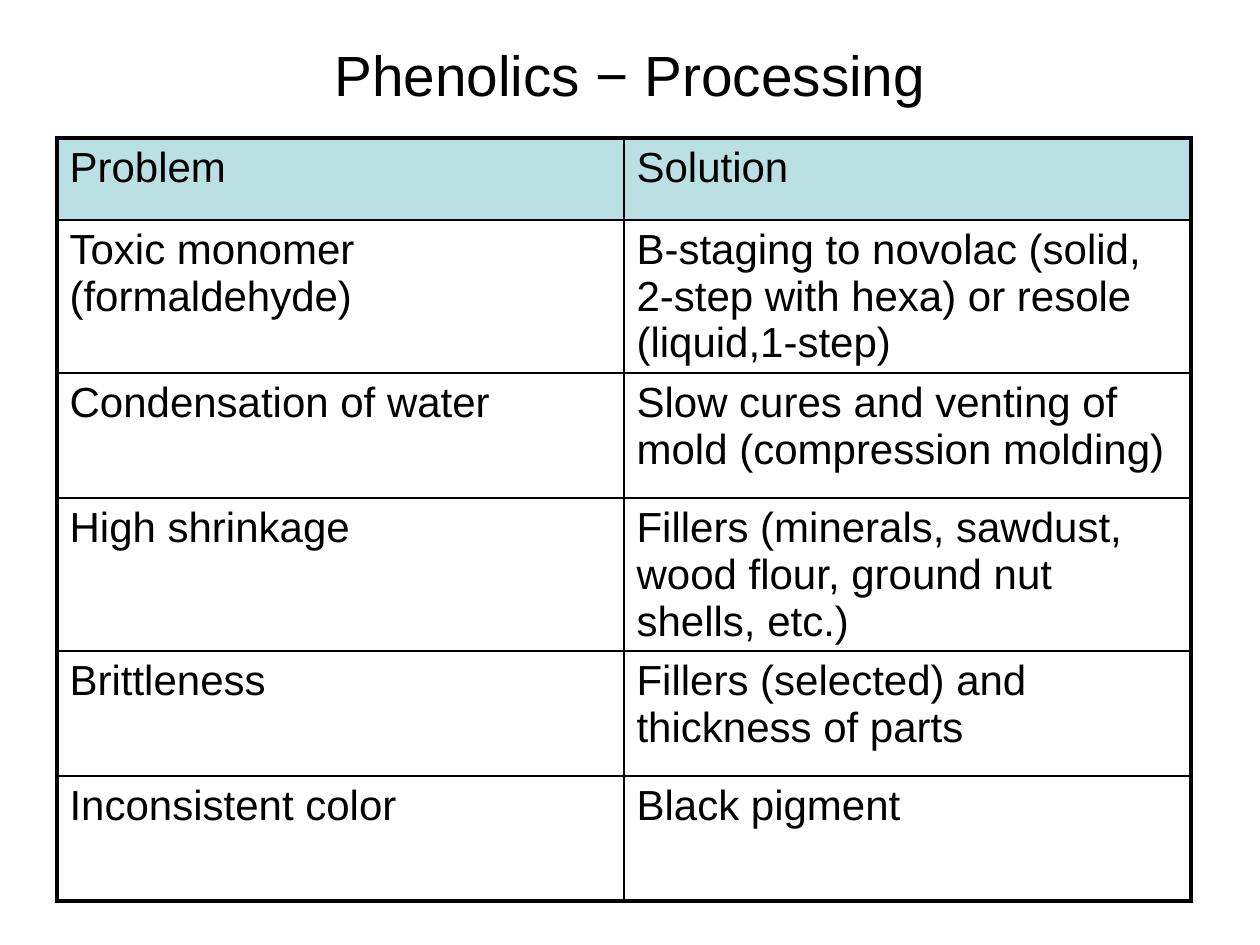
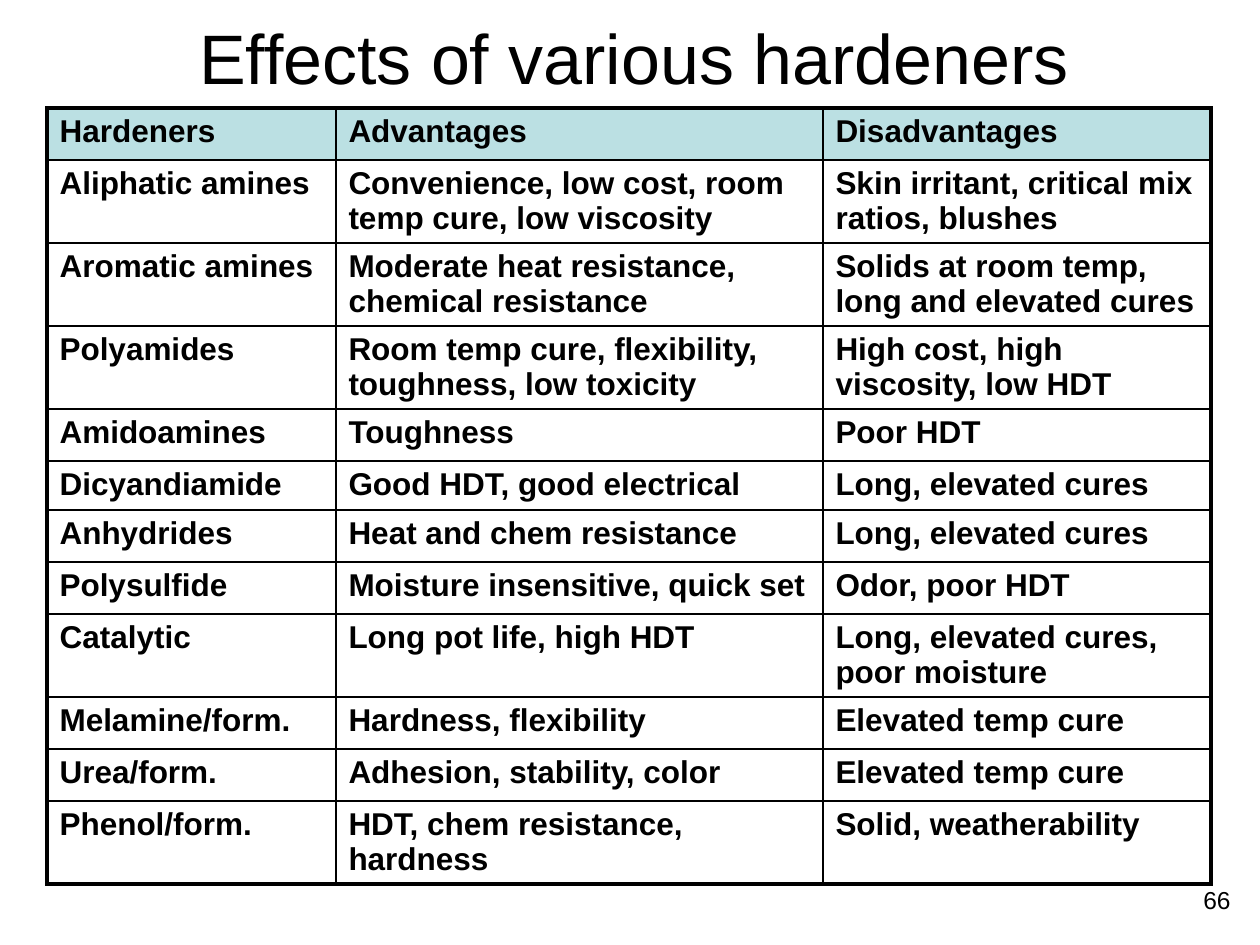
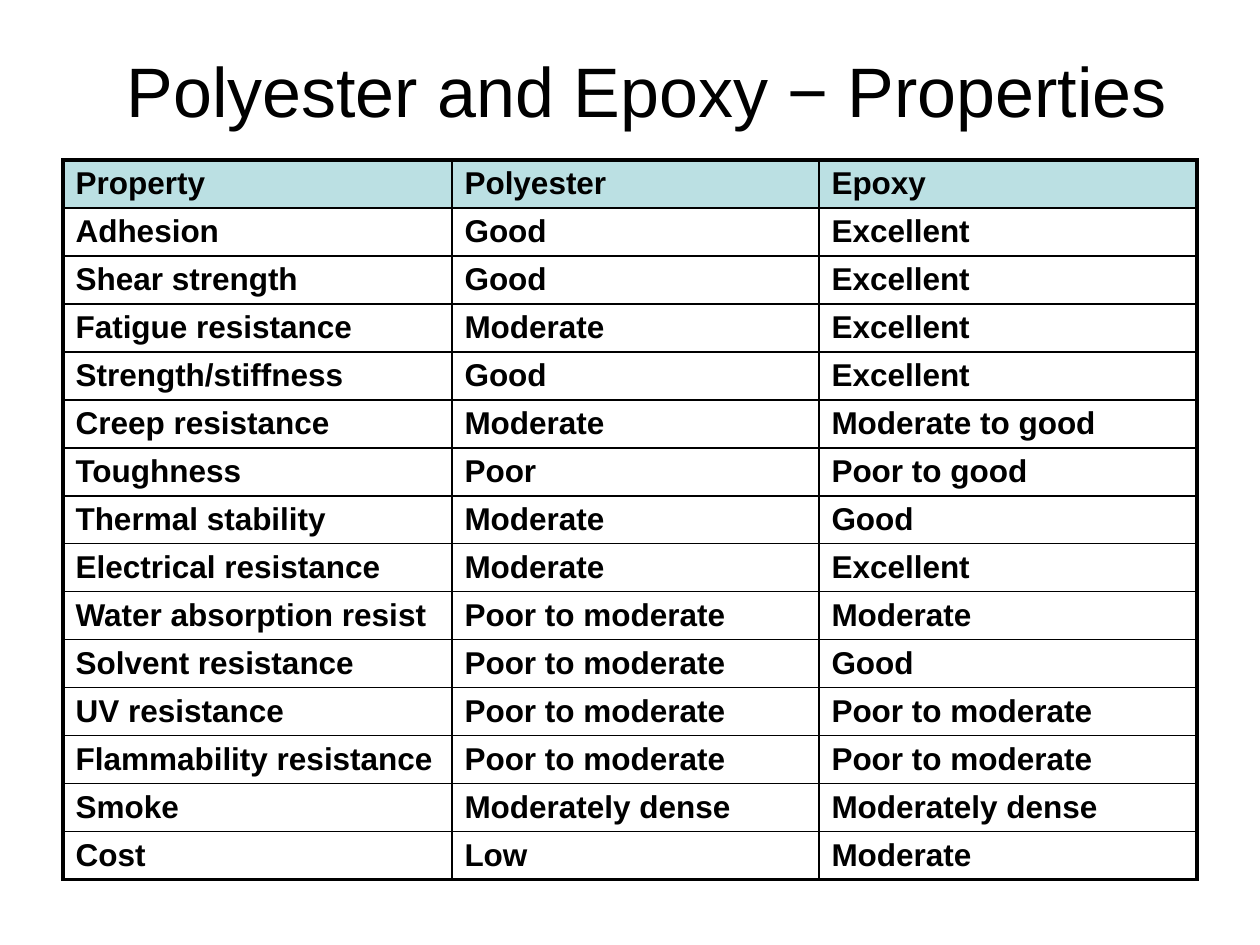
from lxml import etree
from pptx import Presentation
from pptx.dml.color import RGBColor
from pptx.enum.text import MSO_ANCHOR, PP_ALIGN
from pptx.oxml.ns import qn
from pptx.util import Pt

EMU_PER_PX = 914400 / 126
SLIDE_WIDTH, SLIDE_HEIGHT = 1260, 945
LEFT, CENTER, RIGHT = PP_ALIGN.LEFT, PP_ALIGN.CENTER, PP_ALIGN.RIGHT
TOP, MIDDLE = MSO_ANCHOR.TOP, MSO_ANCHOR.MIDDLE
FONT = "Arial"
INK = "000000"
HEADER_FILL = "BBE0E3"
OUTER_LINE, INNER_LINE = 2.25, 1
TABLE_LEADING = {18: 20.1, 24: 26.75}

PROCESSING = [
    ("Problem", "Solution"),
    ("Toxic monomer (formaldehyde)",
     "B-staging to novolac (solid, 2-step with hexa) or resole (liquid,1-step)"),
    ("Condensation of water", "Slow cures and venting of mold (compression molding)"),
    ("High shrinkage", "Fillers (minerals, sawdust, wood flour, ground nut shells, etc.)"),
    ("Brittleness", "Fillers (selected) and thickness of parts"),
    ("Inconsistent color", "Black pigment"),
]
HARDENERS = [
    ("Hardeners", "Advantages", "Disadvantages"),
    ("Aliphatic amines", "Convenience, low cost, room temp cure, low viscosity",
     "Skin irritant, critical mix ratios, blushes"),
    ("Aromatic amines", "Moderate heat resistance, chemical resistance",
     "Solids at room temp, long and elevated cures"),
    ("Polyamides", "Room temp cure, flexibility, toughness, low toxicity",
     "High cost, high viscosity, low HDT"),
    ("Amidoamines", "Toughness", "Poor HDT"),
    ("Dicyandiamide", "Good HDT, good electrical", "Long, elevated cures"),
    ("Anhydrides", "Heat and chem resistance", "Long, elevated cures"),
    ("Polysulfide", "Moisture insensitive, quick set", "Odor, poor HDT"),
    ("Catalytic", "Long pot life, high HDT", "Long, elevated cures, poor moisture"),
    ("Melamine/form.", "Hardness, flexibility", "Elevated temp cure"),
    ("Urea/form.", "Adhesion, stability, color", "Elevated temp cure"),
    ("Phenol/form.", "HDT, chem resistance, hardness", "Solid, weatherability"),
]
PROPERTIES = [
    ("Property", "Polyester", "Epoxy"),
    ("Adhesion", "Good", "Excellent"),
    ("Shear strength", "Good", "Excellent"),
    ("Fatigue resistance", "Moderate", "Excellent"),
    ("Strength/stiffness", "Good", "Excellent"),
    ("Creep resistance", "Moderate", "Moderate to good"),
    ("Toughness", "Poor", "Poor to good"),
    ("Thermal stability", "Moderate", "Good"),
    ("Electrical resistance", "Moderate", "Excellent"),
    ("Water absorption resist", "Poor to moderate", "Moderate"),
    ("Solvent resistance", "Poor to moderate", "Good"),
    ("UV resistance", "Poor to moderate", "Poor to moderate"),
    ("Flammability resistance", "Poor to moderate", "Poor to moderate"),
    ("Smoke", "Moderately dense", "Moderately dense"),
    ("Cost", "Low", "Moderate"),
]


def px(length):
    return round(length * EMU_PER_PX)


def color(value):
    return RGBColor.from_string(value)


def write(frame, text, size, bold=False, align=LEFT, anchor=TOP, leading=None):
    frame.word_wrap = True
    frame.vertical_anchor = anchor
    paragraph = frame.paragraphs[0]
    paragraph.alignment = align
    if leading:
        paragraph.line_spacing = Pt(leading)
    run = paragraph.add_run()
    run.text = text
    run.font.name = FONT
    run.font.size = Pt(size)
    run.font.bold = bold
    run.font.color.rgb = color(INK)


def add_text(slide, box, text, **text_format):
    shape = slide.shapes.add_textbox(*map(px, box))
    write(shape.text_frame, text, **text_format)


def add_title(slide, box, text, size=40):
    add_text(slide, box, text, size=size, align=CENTER, anchor=MIDDLE)


def set_borders(cell, outer_sides):
    properties = cell._tc.get_or_add_tcPr()
    for side, is_outer in zip("LRTB", outer_sides):
        width = OUTER_LINE if is_outer else INNER_LINE
        line = etree.SubElement(properties, qn(f"a:ln{side}"), w=str(Pt(width)))
        fill = etree.SubElement(line, qn("a:solidFill"))
        etree.SubElement(fill, qn("a:srgbClr"), val=INK)


def add_grid(slide, left, top, widths, heights, rows, size=18, bold=True):
    last_row, last_column = len(rows) - 1, len(widths) - 1
    box = map(px, (left, top, sum(widths), sum(heights)))
    table = slide.shapes.add_table(len(rows), len(widths), *box).table
    table.first_row = table.horz_banding = False
    for column, width in zip(table.columns, widths):
        column.width = px(width)
    for row, height in zip(table.rows, heights):
        row.height = px(height)
    for r, texts in enumerate(rows):
        for c, text in enumerate(texts):
            cell = table.cell(r, c)
            write(cell.text_frame, text, size, bold, leading=TABLE_LEADING[size])
            set_borders(cell, (c == 0, c == last_column, r == 0, r == last_row))
            if r == 0:
                cell.fill.solid()
                cell.fill.fore_color.rgb = color(HEADER_FILL)
            else:
                cell.fill.background()


def main():
    presentation = Presentation()
    presentation.slide_width = px(SLIDE_WIDTH)
    presentation.slide_height = px(SLIDE_HEIGHT)
    blank = presentation.slide_layouts[6]

    slide = presentation.slides.add_slide(blank)
    add_title(slide, (63, 38, 1134, 72), "Phenolics − Processing", size=32.4)
    add_grid(slide, 57, 138, [567] * 2, [82, 153, 125, 153, 125, 125],
             PROCESSING, size=24, bold=False)

    slide = presentation.slides.add_slide(blank)
    add_title(slide, (67, 24, 1134, 66), "Effects of various hardeners")
    one_line, two_lines = 52, 83
    heights = [one_line] + [two_lines] * 3 + [one_line, 49] + [one_line] * 2
    heights += [two_lines] + [one_line] * 2 + [two_lines]
    add_grid(slide, 47, 108, [289, 487, 388], heights, HARDENERS)
    add_text(slide, (1166, 879, 77, 45), "66", size=14, align=RIGHT)

    slide = presentation.slides.add_slide(blank)
    add_title(slide, (63, 38, 1167, 103), "Polyester and Epoxy − Properties")
    add_grid(slide, 63, 160, [389, 367, 378], [48] * len(PROPERTIES), PROPERTIES)

    presentation.save("out.pptx")


if __name__ == "__main__":
    main()
